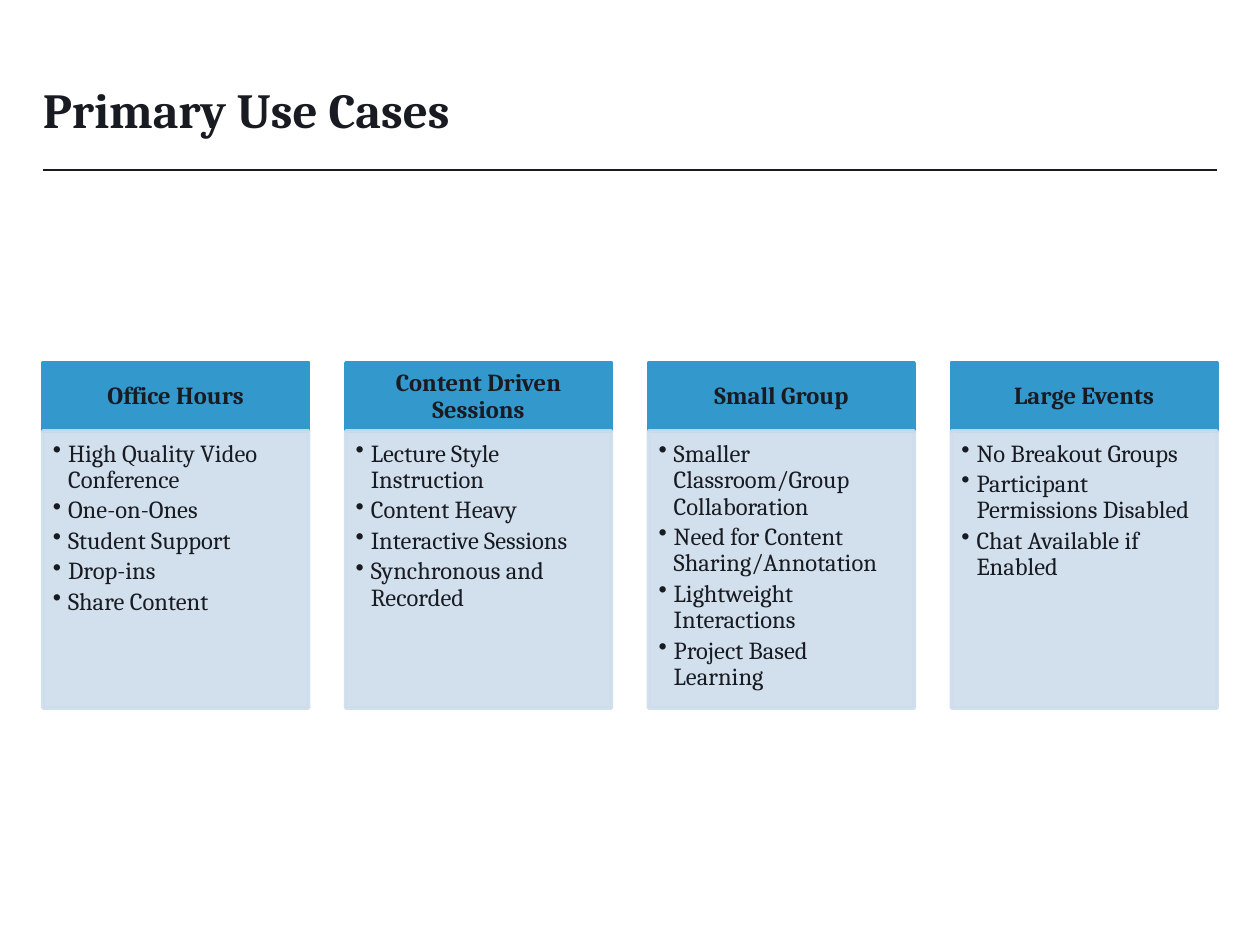
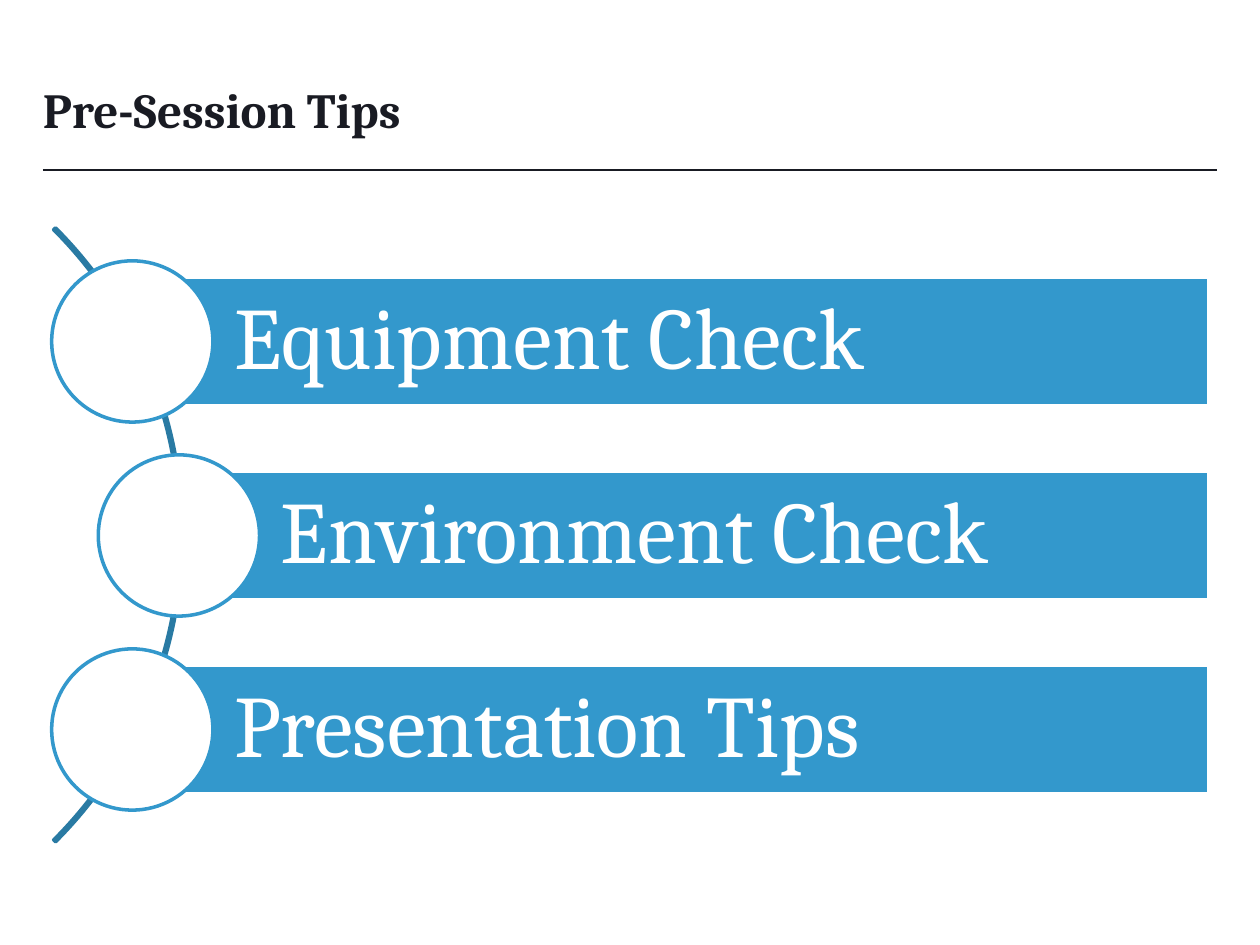
from lxml import etree
from pptx import Presentation
from pptx.dml.color import RGBColor
from pptx.enum.shapes import MSO_CONNECTOR, MSO_SHAPE
from pptx.enum.text import MSO_ANCHOR, PP_ALIGN
from pptx.oxml.ns import qn
from pptx.util import Inches, Pt

INK = RGBColor(0x19, 0x1B, 0x23)
BLUE = RGBColor(0x33, 0x98, 0xCC)
DARK_BLUE = RGBColor(0x29, 0x7A, 0xA3)
PALE_BLUE = RGBColor(0xCE, 0xDD, 0xEC)
WHITE = RGBColor(0xFF, 0xFF, 0xFF)
FONT = "Cambria"
MARGIN = 0.34
CONTENT_WIDTH = 9.32

USE_CASES = [
    ("Office Hours", ["High Quality Video Conference", "One-on-Ones",
                      "Student Support", "Drop-ins", "Share Content"]),
    ("Content Driven Sessions", ["Lecture Style Instruction", "Content Heavy",
                                 "Interactive Sessions", "Synchronous and Recorded"]),
    ("Small Group", ["Smaller Classroom/Group Collaboration",
                     "Need for Content Sharing/Annotation",
                     "Lightweight Interactions", "Project Based Learning"]),
    ("Large Events", ["No Breakout Groups", "Participant Permissions Disabled",
                      "Chat Available if Enabled"]),
]
TIPS = [("Equipment Check", 1.05), ("Environment Check", 1.42), ("Presentation Tips", 1.05)]


def add_shape(slide, kind, box, fill, line, opacity=None):
    """Add a flat shape with a 2 pt outline; opacity is a percentage."""
    shape = slide.shapes.add_shape(kind, *[Inches(length) for length in box])
    shape.shadow.inherit = False
    shape.fill.solid()
    shape.fill.fore_color.rgb = fill
    shape.line.color.rgb = line
    shape.line.width = Pt(2)
    if opacity is not None:
        for color in shape._element.spPr.iter(qn("a:srgbClr")):
            etree.SubElement(color, qn("a:alpha"), val=str(opacity * 1000))
    return shape


def set_frame(shape, insets, anchor):
    """Set wrapping, anchor and the left, top, right and bottom insets."""
    frame = shape.text_frame
    frame.word_wrap = True
    frame.vertical_anchor = anchor
    (frame.margin_left, frame.margin_top,
     frame.margin_right, frame.margin_bottom) = [Inches(inset) for inset in insets]
    return frame


def write(paragraph, text, size, color=INK, bold=False, align=PP_ALIGN.LEFT, spacing=0.9):
    paragraph.alignment = align
    paragraph.line_spacing = spacing
    run = paragraph.add_run()
    run.text = text
    run.font.name = FONT
    run.font.size = Pt(size)
    run.font.bold = bold
    run.font.color.rgb = color


def add_bullet(paragraph):
    properties = paragraph._p.get_or_add_pPr()
    properties.set("marL", str(Inches(0.12)))
    properties.set("indent", str(-Inches(0.12)))
    etree.SubElement(properties, qn("a:buChar"), char="•")


def add_titled_slide(presentation, title):
    slide = presentation.slides.add_slide(presentation.slide_layouts[6])
    rule = slide.shapes.add_connector(
        MSO_CONNECTOR.STRAIGHT, Inches(MARGIN), Inches(1.35),
        Inches(MARGIN + CONTENT_WIDTH), Inches(1.35))
    rule.line.color.rgb = INK
    rule.line.width = Pt(0.75)
    etree.SubElement(rule._element.spPr, qn("a:effectLst"))
    box = slide.shapes.add_textbox(
        Inches(MARGIN), Inches(0.31), Inches(CONTENT_WIDTH), Inches(0.84))
    frame = set_frame(box, (0, 0.05, 0, 0.05), MSO_ANCHOR.BOTTOM)
    write(frame.paragraphs[0], title, 28, bold=True, spacing=1.0)
    return slide


def add_use_case(slide, left, width, heading, items):
    """Add a heading block with a bulleted panel below it."""
    top, heading_height, panel_height = 2.88, 0.54, 2.2
    header = add_shape(slide, MSO_SHAPE.RECTANGLE,
                       (left, top, width, heading_height), BLUE, BLUE)
    frame = set_frame(header, (0.11, 0.06, 0.11, 0.06), MSO_ANCHOR.MIDDLE)
    write(frame.paragraphs[0], heading, 14, bold=True, align=PP_ALIGN.CENTER)

    panel = add_shape(slide, MSO_SHAPE.RECTANGLE,
                      (left, top + heading_height, width, panel_height),
                      PALE_BLUE, PALE_BLUE, opacity=90)
    frame = set_frame(panel, (0.08, 0.08, 0.11, 0.12), MSO_ANCHOR.TOP)
    for index, item in enumerate(items):
        paragraph = frame.add_paragraph() if index else frame.paragraphs[0]
        add_bullet(paragraph)
        paragraph.space_after = Pt(2.2)
        write(paragraph, item, 14)


def add_arc(slide):
    arc = add_shape(slide, MSO_SHAPE.BLOCK_ARC, (-5.44, 0.8, 6.89, 6.89),
                    DARK_BLUE, DARK_BLUE)
    # Start angle, end angle and thickness
    for index, value in enumerate((189, 27, 0.003)):
        arc.adjustments[index] = value


def add_tip(slide, left, middle, text):
    """Add a bar with a circle centred on its left edge."""
    right, height, diameter = 9.59, 1.02, 1.28
    bar = add_shape(slide, MSO_SHAPE.RECTANGLE,
                    (left, middle - height / 2, right - left, height), BLUE, WHITE)
    frame = set_frame(bar, (0.81, 0.14, 0.14, 0.14), MSO_ANCHOR.MIDDLE)
    write(frame.paragraphs[0], text, 50, WHITE)
    add_shape(slide, MSO_SHAPE.OVAL,
              (left - diameter / 2, middle - diameter / 2, diameter, diameter), WHITE, BLUE)


def main():
    presentation = Presentation()
    presentation.slide_width = Inches(10)
    presentation.slide_height = Inches(7.5)

    slide = add_titled_slide(presentation, "Primary Use Cases")
    column_width = 2.11
    column_step = (CONTENT_WIDTH - column_width) / (len(USE_CASES) - 1)
    for index, (heading, items) in enumerate(USE_CASES):
        add_use_case(slide, MARGIN + index * column_step, column_width, heading, items)

    slide = add_titled_slide(presentation, "Pre-Session Tips")
    add_arc(slide)
    for index, (text, left) in enumerate(TIPS):
        add_tip(slide, left, 2.71 + index * 1.54, text)

    presentation.save("out.pptx")


if __name__ == "__main__":
    main()
